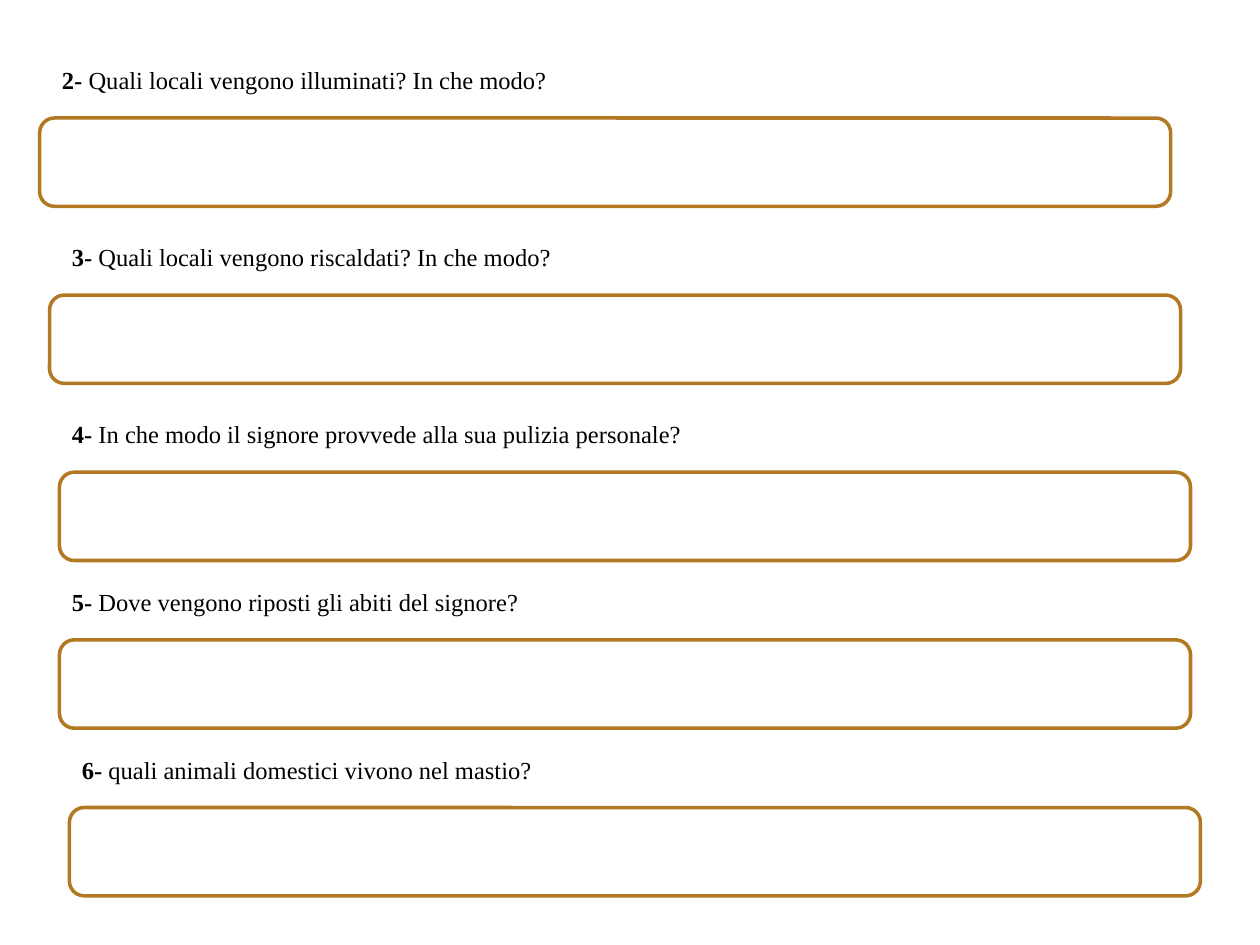
from pptx import Presentation
from pptx.dml.color import RGBColor
from pptx.enum.shapes import MSO_SHAPE
from pptx.enum.text import MSO_AUTO_SIZE, PP_ALIGN
from pptx.util import Cm, Pt

BLACK = RGBColor(0x00, 0x00, 0x00)
WHITE = RGBColor(0xFF, 0xFF, 0xFF)
OCHRE = RGBColor(0xB2, 0x78, 0x22)

QUESTION_HEIGHT = 0.86
QUESTION_WIDTH = 19.05
ANSWER_DROP = 1.19  # from the top of a question to its answer box
ANSWER_SIZE = (22.8, 1.78)

# Number, question, top, question left, question width, answer left (cm)
QUESTIONS = [
    (2, "Quali locali vengono illuminati? In che modo?", 1.19, 1.0, 24.4, 0.8),
    (3, "Quali locali vengono riscaldati? In che modo?", 4.76, 1.2, QUESTION_WIDTH, 1.0),
    (4, "In che modo il signore provvede alla sua pulizia personale?",
     8.33, 1.2, QUESTION_WIDTH, 1.2),
    (5, "Dove vengono riposti gli abiti del signore?", 11.71, 1.2, QUESTION_WIDTH, 1.2),
    (6, "quali animali domestici vivono nel mastio?", 15.09, 1.4, QUESTION_WIDTH, 1.4),
]


class Worksheet:
    """Holds the text style and the current slide."""

    font_format = {"name": "Times New Roman", "size": Pt(14)}
    frame_format = {"word_wrap": True, "auto_size": MSO_AUTO_SIZE.SHAPE_TO_FIT_TEXT}

    def __init__(self, slide):
        self.slide = slide

    def apply(self, target, values):
        for attribute, value in values.items():
            setattr(target, attribute, value)

    def question(self, number, wording, left, top, width):
        box = self.slide.shapes.add_textbox(
            Cm(left), Cm(top), Cm(width), Cm(QUESTION_HEIGHT))
        self.apply(box.text_frame, self.frame_format)
        paragraph = box.text_frame.paragraphs[0]
        paragraph.alignment = PP_ALIGN.JUSTIFY
        for text, bold in ((f"{number}- ", True), (wording, False)):
            run = paragraph.add_run()
            run.text = text
            self.apply(run.font, {**self.font_format, "bold": bold})
            run.font.color.rgb = BLACK

    def answer(self, left, top):
        width, height = ANSWER_SIZE
        box = self.slide.shapes.add_shape(
            MSO_SHAPE.ROUNDED_RECTANGLE, Cm(left), Cm(top), Cm(width), Cm(height))
        box.shadow.inherit = False
        box.fill.solid()
        box.fill.fore_color.rgb = WHITE
        box.line.color.rgb = OCHRE
        box.line.width = Pt(2)


def main():
    presentation = Presentation()
    presentation.slide_width, presentation.slide_height = Cm(25.4), Cm(19.05)
    blank_layout = presentation.slide_layouts[6]
    worksheet = Worksheet(presentation.slides.add_slide(blank_layout))

    # Each question with its empty answer box below
    for number, wording, top, left, width, answer_left in QUESTIONS:
        worksheet.question(number, wording, left, top, width)
        worksheet.answer(answer_left, top + ANSWER_DROP)

    presentation.save("out.pptx")


if __name__ == "__main__":
    main()
